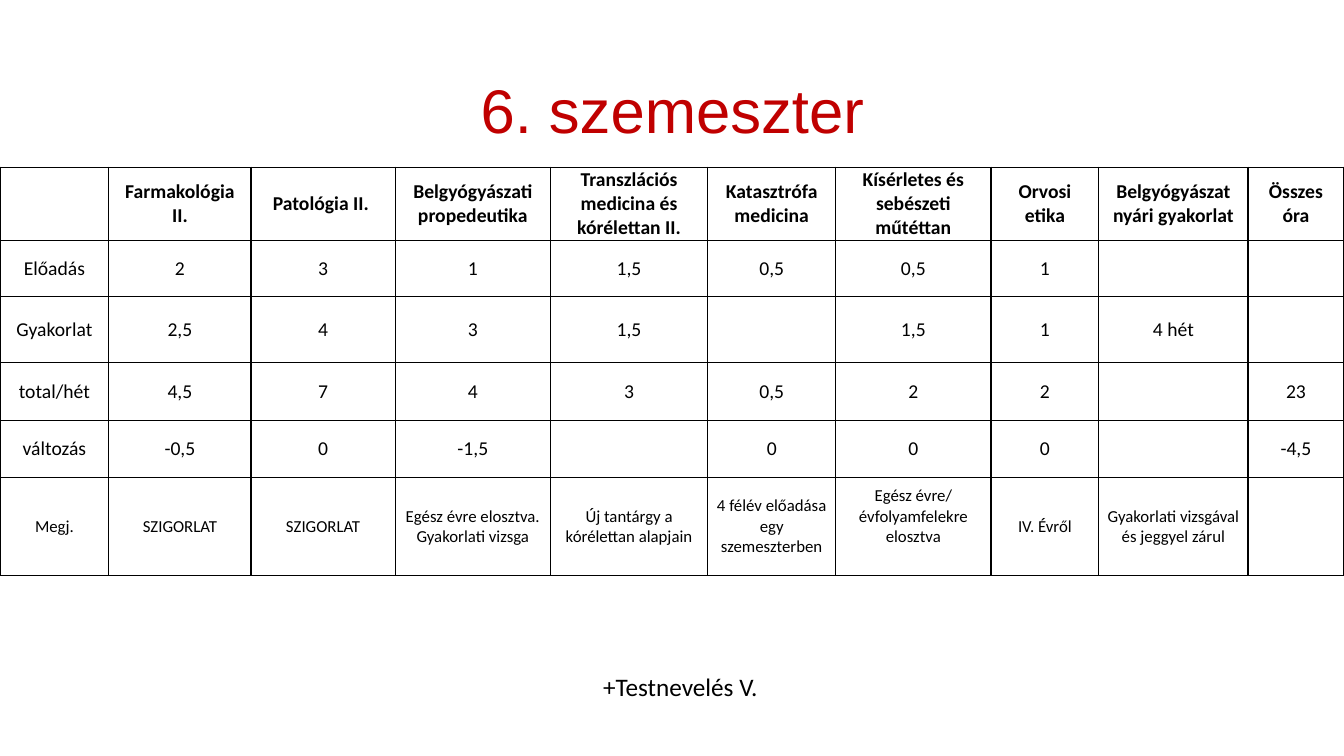
from lxml import etree
from pptx import Presentation
from pptx.dml.color import RGBColor
from pptx.enum.text import MSO_ANCHOR, PP_ALIGN
from pptx.oxml.ns import qn
from pptx.util import Pt

PX = 9144
CENTER = PP_ALIGN.CENTER
MIDDLE, TOP = MSO_ANCHOR.MIDDLE, MSO_ANCHOR.TOP
COLORS = {"title": "C00000", "text": "000000", "border": "000000", "page": "FFFFFF"}

COLUMN_WIDTHS = [108, 141, 143, 154, 156, 127, 154, 107, 148, 95]
ROW_HEIGHTS = [73, 55, 66, 57, 57, 97]
TALL_NOTE = "Egész évre/ évfolyamfelekre elosztva"
SUBJECTS = ["", "Farmakológia II.", "Patológia II. ", "Belgyógyászati propedeutika",
            "Transzlációs medicina és kórélettan II.", "Katasztrófa medicina",
            "Kísérletes és sebészeti műtéttan", "Orvosi etika",
            "Belgyógyászat nyári gyakorlat", "Összes óra"]
HOURS = [
    ["Előadás", "2", "3", "1", "1,5", "0,5", "0,5", "1", "", ""],
    ["Gyakorlat", "2,5", "4", "3", "1,5", "", "1,5", "1", "4 hét", ""],
    ["total/hét", "4,5", "7", "4", "3", "0,5", "2", "2", "", "23"],
    ["változás", "-0,5", "0", "-1,5", "", "0", "0", "0", "", "-4,5"],
]
NOTES = ["Megj.", "SZIGORLAT", "SZIGORLAT", "Egész évre elosztva. Gyakorlati vizsga",
         "Új tantárgy a kórélettan alapjain", "4 félév előadása egy szemeszterben",
         TALL_NOTE, "IV. Évről", "Gyakorlati vizsgával és jeggyel zárul", ""]


def add_span(para, text, size, font="Calibri", color="text", bold=False):
    """Add one centred, styled run to a paragraph."""
    para.alignment = CENTER
    span = para.add_run()
    span.text = text
    span.font.size = Pt(size)
    span.font.name = font
    span.font.bold = bold
    span.font.color.rgb = RGBColor.from_string(COLORS[color])


def add_label(page, box, text, size, anchor, spacing=1.0, **style):
    """Place a centred line of text in the given box."""
    frame = page.shapes.add_textbox(*(length * PX for length in box)).text_frame
    frame.word_wrap = True
    frame.vertical_anchor = anchor
    para = frame.paragraphs[0]
    para.line_spacing = spacing
    add_span(para, text, size, **style)


def add_borders(cell):
    """Draw a thin solid line on each side of a cell."""
    properties = cell._tc.get_or_add_tcPr()
    for side in ("a:lnL", "a:lnR", "a:lnT", "a:lnB"):
        line = etree.SubElement(properties, qn(side), w=str(Pt(1)))
        fill = etree.SubElement(line, qn("a:solidFill"))
        etree.SubElement(fill, qn("a:srgbClr"), val=COLORS["border"])


def fill_cell(cell, text, size, bold):
    """Give a cell its borders, insets and text."""
    add_borders(cell)
    cell.fill.background()
    cell.vertical_anchor = MIDDLE
    cell.margin_left = cell.margin_right = 7 * PX
    cell.margin_top = 0
    cell.margin_bottom = 20 * PX if text == TALL_NOTE else 0
    if text:
        add_span(cell.text_frame.paragraphs[0], text, size, bold=bold)


def add_timetable(page, left, top):
    """Build the table of subjects, weekly hours and notes."""
    rows = [SUBJECTS, *HOURS, NOTES]
    table = page.shapes.add_table(
        len(rows), len(SUBJECTS), left * PX, top * PX,
        sum(COLUMN_WIDTHS) * PX, sum(ROW_HEIGHTS) * PX).table
    table.first_row = table.horz_banding = False
    for column, width in zip(table.columns, COLUMN_WIDTHS):
        column.width = width * PX
    for row, height, texts in zip(table.rows, ROW_HEIGHTS, rows):
        row.height = height * PX
        for cell, text in zip(row.cells, texts):
            fill_cell(cell, text, 12 if texts is NOTES else 14, texts is SUBJECTS)


def main():
    """Build and save the semester slide."""
    deck = Presentation()
    deck.slide_width, deck.slide_height = 1333 * PX, 750 * PX
    page = deck.slides.add_slide(deck.slide_layouts[6])
    page.background.fill.solid()
    page.background.fill.fore_color.rgb = RGBColor.from_string(COLORS["page"])
    add_label(page, (92, 40, 1150, 145), "6. szemeszter", 44, MIDDLE,
              spacing=0.9, font="Arial", color="title")
    add_timetable(page, 0, 166)
    add_label(page, (522, 661, 311, 40), "+Testnevelés V. ", 18, TOP)
    deck.save("out.pptx")


if __name__ == "__main__":
    main()
